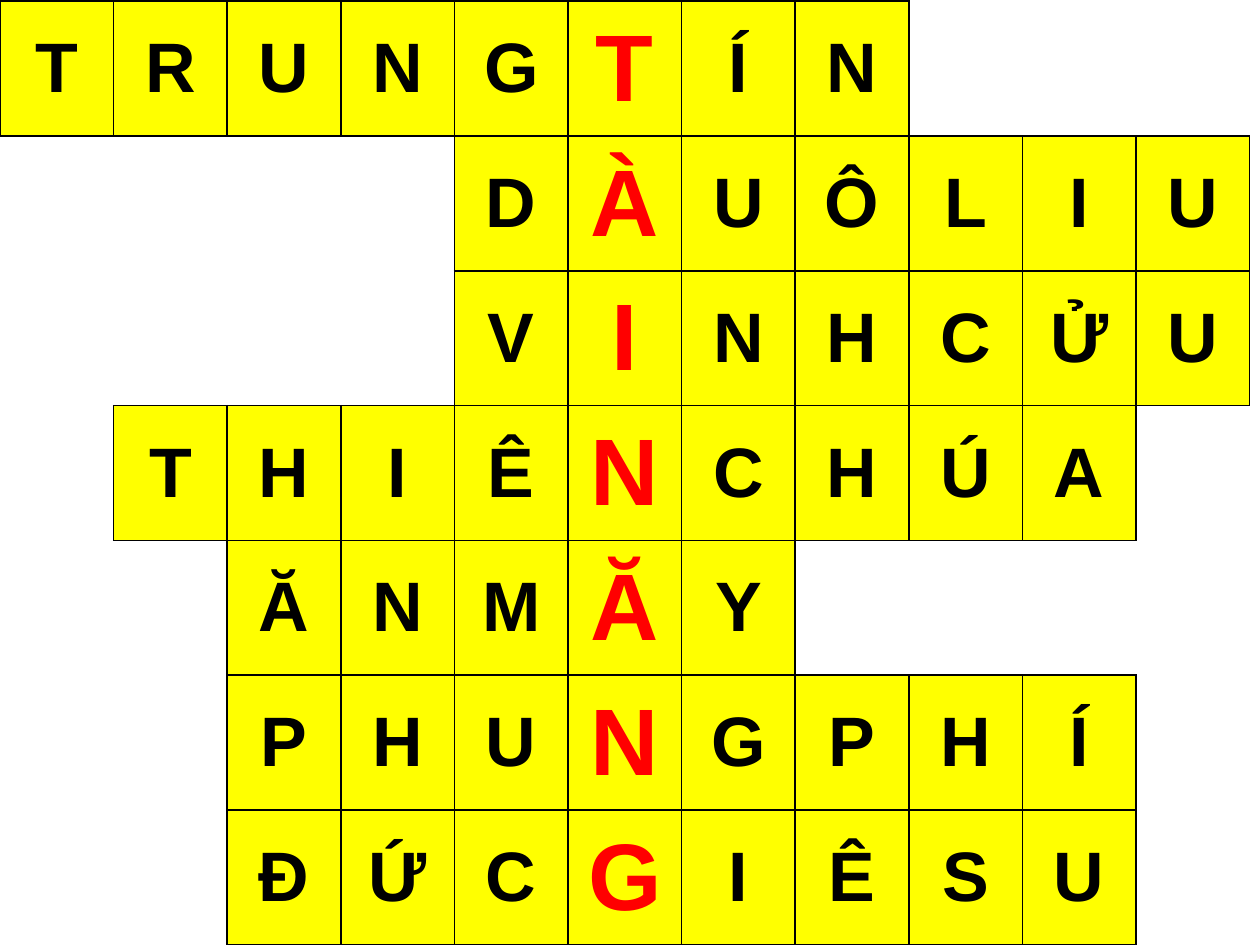
"""Build a crossword grid slide with a red key word running down one column."""
from lxml import etree
from pptx import Presentation
from pptx.dml.color import RGBColor
from pptx.enum.text import MSO_ANCHOR, PP_ALIGN
from pptx.oxml.ns import qn
from pptx.util import Inches, Pt

MIDDLE = MSO_ANCHOR.MIDDLE
CENTER = PP_ALIGN.CENTER
COLS = 11
KEY = 5
WORDS = [
    (0, "TRUNGTÍN"),
    (4, "DÀUÔLIU"),
    (4, "VINHCỬU"),
    (1, "THIÊNCHÚA"),
    (2, "ĂNMĂY"),
    (2, "PHUNGPHÍ"),
    (2, "ĐỨCGIÊSU"),
]
SIDES = {"L": (0, -1), "R": (0, 1), "T": (-1, 0), "B": (1, 0)}
PLAIN = {"size": Pt(40), "bold": True, "name": "Arial"}
LARGE = {**PLAIN, "size": Pt(54)}


def color(code):
    return RGBColor.from_string(code)


def border(cell, side, shown):
    line = etree.SubElement(cell._tc.get_or_add_tcPr(), qn(f"a:ln{side}"), w=str(Pt(1)))
    if shown:
        fill = etree.SubElement(line, qn("a:solidFill"))
        etree.SubElement(fill, qn("a:srgbClr"), val="000000")
    else:
        etree.SubElement(line, qn("a:noFill"))


deck = Presentation()
deck.slide_width, deck.slide_height = Inches(10), Inches(7.5)
slide = deck.slides.add_slide(deck.slide_layouts[6])
frame = slide.shapes.add_table(
    len(WORDS), COLS, Inches(0), Inches(0.01), Inches(9.92), Inches(7.49))
grid = frame.table
grid.first_row = grid.horz_banding = False

letters = {(row, start + step): letter
           for row, (start, word) in enumerate(WORDS)
           for step, letter in enumerate(word)}

for row in range(len(WORDS)):
    for col in range(COLS):
        cell = grid.cell(row, col)
        letter = letters.get((row, col))
        for side, (down, right) in SIDES.items():
            border(cell, side, letter or (row + down, col + right) in letters)
        if not letter:
            cell.fill.background()
            continue
        cell.fill.solid()
        cell.fill.fore_color.rgb = color("FFFF00")
        cell.vertical_anchor = MIDDLE
        para = cell.text_frame.paragraphs[0]
        para.alignment = CENTER
        run = para.add_run()
        run.text = letter
        for name, value in (LARGE if col == KEY else PLAIN).items():
            setattr(run.font, name, value)
        run.font.color.rgb = color("FF0000" if col == KEY else "000000")

deck.save("out.pptx")
